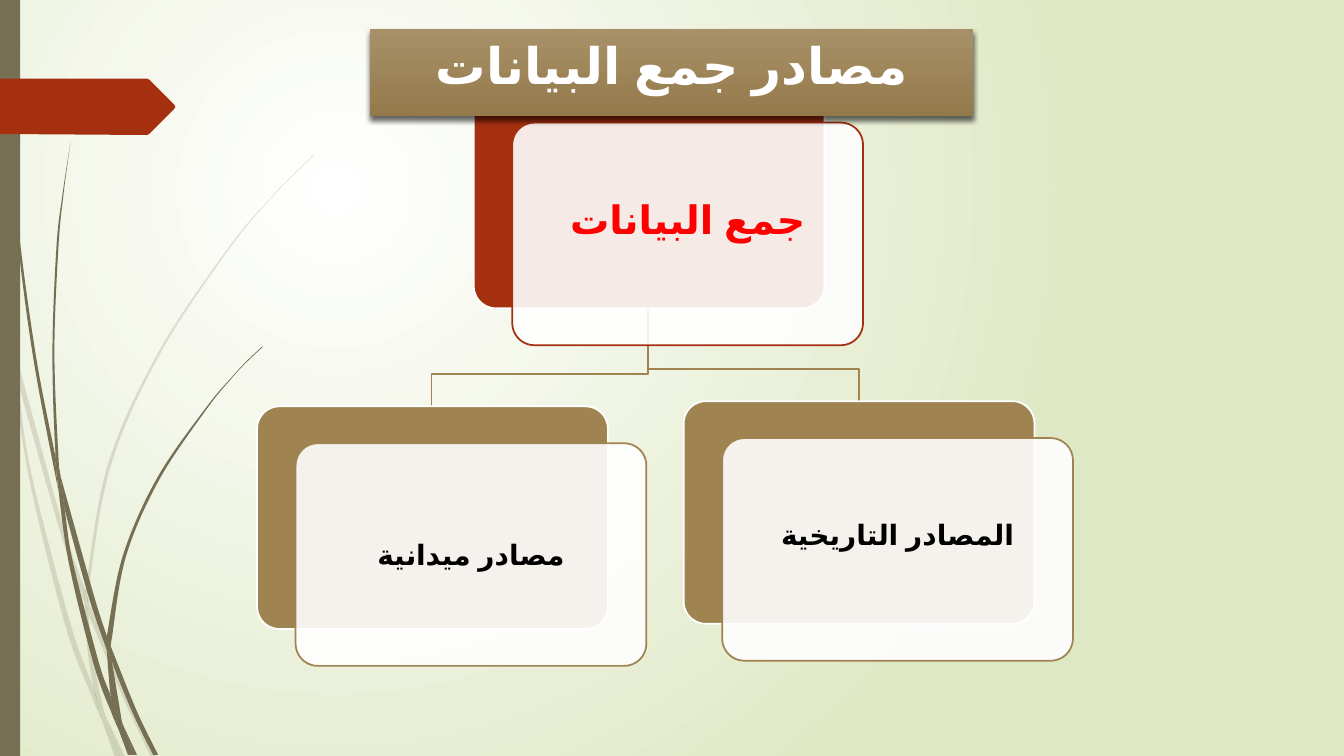
from dataclasses import dataclass
from typing import Optional

from lxml import etree
from pptx import Presentation
from pptx import util as u
from pptx.dml.color import RGBColor
from pptx.enum import shapes, text
from pptx.oxml import ns

FONT = "League Spartan"
OLIVE, RUST, TAN, WHITE = "766F54", "A53010", "9F8351", "FFFFFF"
CARD_WIDTH, CARD_HEIGHT = 8.84, 5.61
SHIFT_X, SHIFT_Y = 0.97, 0.93  # from the back panel of a card to its front panel
UNIT = 2.54  # centimetres per unit of the outline points

Point = tuple[float, float]


@dataclass
class Card:
    label: str
    left: float
    top: float
    accent: str
    color: str
    size: int
    inset: float
    lift: float = 0  # extra bottom margin that raises the label


@dataclass
class Blade:
    """A leaf of grass: one edge out, the other edge back."""
    out: list[Point]
    back: list[Point]


CARDS = [
    Card("جمع البيانات", 11.94, 2.16, RUST, "FF0000", 28, 0.3, 0.75),
    Card("المصادر التاريخية", 17.23, 10.11, TAN, "000000", 20, 0.2, 0.75),
    Card("مصادر ميدانية", 6.48, 10.24, TAN, "000000", 20, 0.2),
]
BRANCHES = [
    [(6.43, 3.06), (6.43, 3.71), (4.28, 3.71), (4.28, 4.03)],
    [(6.43, 3.06), (6.43, 3.66), (8.52, 3.66), (8.52, 3.98)],
]
FLAG = [(0, .78), (1.46, .78), (1.48, .79), (1.73, 1.04), (1.74, 1.06),
        (1.73, 1.08), (1.48, 1.33), (1.46, 1.34), (0, 1.33)]
PALE_BLADES = [
    Blade([(.11, 3.5), (.09, 3.22), (0, 2.82)], [(0, 2.99), (.1, 3.44), (.11, 3.5)]),
    Blade([(.17, 3.76), (.58, 5.22), (.84, 5.99)], [(.85, 5.86), (.62, 5.2), (.14, 3.45)]),
    Blade([(.88, 6.1), (1.23, 6.94), (1.5, 7.51)],
          [(1.55, 7.51), (1.27, 6.92), (.92, 6.07), (.88, 5.96)]),
    Blade([(1.05, 7.11), (1.19, 7.51)], [(1.24, 7.51), (1.05, 7.11)]),
    Blade([(.11, 3.5), (.28, 4.7), (.65, 6.21), (.92, 6.93), (1.01, 7.14)],
          [(.99, 7.07), (.93, 6.83), (.7, 6.19), (.31, 4.69), (.17, 3.76), (.11, 3.5)]),
    Blade([(.84, 5.99), (.87, 6.46), (.93, 6.83), (.96, 6.92), (1.05, 7.11)],
          [(1.03, 7.06), (.91, 6.46), (.88, 6.1), (.84, 5.99)]),
    Blade([(.88, 5.96), (.88, 5.84), (1.1, 4.62), (1.6, 3.49), (2.29, 2.45),
           (2.68, 1.98), (2.9, 1.75), (3.12, 1.54)],
          [(3.12, 1.53), (2.89, 1.75), (2.68, 1.97), (2.28, 2.44), (1.58, 3.48),
           (1.07, 4.61), (.85, 5.84), (.85, 5.86)]),
    Blade([(1.01, 7.14), (1.14, 7.51)], [(1.19, 7.51), (1.01, 7.14)]),
    Blade([(.88, 6.08), (.88, 6.1), (.88, 5.96)], [(.85, 5.86), (.84, 5.99), (.88, 6.08)]),
    Blade([(.93, 6.83), (.99, 7.07), (1.01, 7.14), (1.19, 7.51)],
          [(1.19, 7.51), (1.05, 7.11), (.96, 6.92), (.93, 6.83)]),
]
DARK_BLADES = [
    Blade([(.03, 0), (.04, .48), (.07, 1.1), (.17, 2.33), (.33, 3.55), (.56, 4.77), (.57, 4.81)],
          [(.55, 4.57), (.55, 4.53), (.36, 3.55), (.19, 2.32), (.08, 1.09), (.05, .48), (.04, 0)]),
    Blade([(.64, 5.05), (.88, 5.92), (1.06, 6.45)],
          [(1.06, 6.33), (1.06, 6.31), (.93, 5.9), (.6, 4.72)]),
    Blade([(1.1, 6.41), (1.11, 6.56), (1.32, 7.08), (1.52, 7.49)],
          [(1.57, 7.49), (1.36, 7.06), (1.13, 6.49), (1.1, 6.41)]),
    Blade([(.57, 4.77), (.68, 5.57), (.93, 6.59), (1.11, 7.08), (1.17, 7.22)],
          [(1.16, 7.17), (1.1, 6.91), (.98, 6.57), (.72, 5.56), (.64, 5.05), (.57, 4.77)]),
    Blade([(.6, 4.72), (.58, 4.53), (.54, 3.49), (.58, 2.45), (.63, 1.93), (.7, 1.41)],
          [(.7, 1.41), (.62, 1.93), (.56, 2.45), (.52, 3.49), (.55, 4.49), (.6, 4.72)]),
    Blade([(1.22, 7.19), (1.33, 7.49)], [(1.36, 7.49), (1.22, 7.19)]),
    Blade([(.55, 4.49), (.55, 4.53), (.57, 4.77), (.64, 5.05)],
          [(.64, 5.05), (.6, 4.72), (.55, 4.49)]),
    Blade([(1.1, 6.41), (1.11, 6.33), (1.25, 5.52), (1.58, 4.76), (2.05, 4.06),
           (2.31, 3.74), (2.45, 3.59), (2.61, 3.44)],
          [(2.6, 3.44), (2.45, 3.58), (2.31, 3.73), (2.04, 4.05), (1.56, 4.74),
           (1.22, 5.51), (1.06, 6.31)]),
    Blade([(1.17, 7.22), (1.27, 7.49)], [(1.31, 7.49), (1.17, 7.22)]),
    Blade([(1.06, 6.45), (1.1, 6.91), (1.16, 7.06), (1.22, 7.19)],
          [(1.21, 7.16), (1.11, 6.56), (1.09, 6.51), (1.06, 6.45)]),
    Blade([(1.06, 6.45), (1.09, 6.51), (1.11, 6.56)], [(1.1, 6.41), (1.06, 6.31), (1.06, 6.45)]),
    Blade([(1.1, 6.91), (1.16, 7.17), (1.17, 7.22), (1.3, 7.49)],
          [(1.33, 7.49), (1.22, 7.19), (1.16, 7.06), (1.1, 6.91)]),
]


def rgb(value: str) -> RGBColor:
    return RGBColor.from_string(value)


def child(parent, tag: str, **attributes: str):
    return etree.SubElement(parent, ns.qn(tag), attributes)


def paint(shape, fill: Optional[str] = None, line: Optional[str] = None, alpha: int = 100) -> None:
    shape.shadow.inherit = False
    if fill:
        shape.fill.solid()
        shape.fill.fore_color.rgb = rgb(fill)
        if alpha < 100:
            solid = shape.element.spPr.find(ns.qn("a:solidFill"))
            child(solid[0], "a:alpha", val=str(alpha * 1000))
    else:
        shape.fill.background()
    if line:
        shape.line.color.rgb = rgb(line)
        shape.line.width = u.Pt(1.25)
    else:
        shape.line.fill.background()


def blend(fill, first: str, last: str) -> None:
    fill.gradient()
    for stop, color in zip(fill.gradient_stops, (first, last)):
        stop.color.rgb = rgb(color)


def draw_outline(slide, points: list[Point], closed: bool = True, **look):
    start, *rest = [(u.Cm(x * UNIT), u.Cm(y * UNIT)) for x, y in points]
    builder = slide.shapes.build_freeform(*start, scale=1.0)
    builder.add_line_segments(rest, close=closed)
    outline = builder.convert_to_shape()
    paint(outline, **look)
    return outline


def draw_blade(slide, blade: Blade, **look) -> None:
    """Turn each edge's straight segments into one smooth Bezier run."""
    outline = draw_outline(slide, blade.out + blade.back, **look)
    nodes = list(outline.element.iter(ns.qn("a:pt")))
    split = len(blade.out)
    for edge in (nodes[:split], nodes[split:]):
        spots = [(int(node.get("x")), int(node.get("y"))) for node in edge]
        padded = [spots[0], *spots, spots[-1]]
        for node, a, b, c, d in zip(edge[1:], padded, padded[1:], padded[2:], padded[3:]):
            segment = node.getparent()
            segment.tag = ns.qn("a:cubicBezTo")
            leave = [q + (r - p) / 6 for p, q, r in zip(a, b, c)]
            arrive = [q - (r - p) / 6 for p, q, r in zip(b, c, d)]
            for x, y in (leave, arrive):
                child(segment, "a:pt", x=str(round(x)), y=str(round(y)))
            segment.append(node)


def draw_shape(slide, kind, left: float, top: float, width: float, height: float, **look):
    shape = slide.shapes.add_shape(kind, u.Cm(left), u.Cm(top), u.Cm(width), u.Cm(height))
    paint(shape, **look)
    return shape


def write(frame, content: str, *, size: int, color: str, anchor) -> None:
    frame.word_wrap = True
    frame.vertical_anchor = anchor
    paragraph = frame.paragraphs[0]
    paragraph.alignment = text.PP_ALIGN.CENTER
    paragraph._p.get_or_add_pPr().set("rtl", "1")
    run = paragraph.add_run()
    run.text = content
    run.font.size = u.Pt(size)
    run.font.bold = True
    run.font.name = FONT
    run.font.color.rgb = rgb(color)
    run._r.get_or_add_rPr().set("lang", "ar-SA")


def draw_card(slide, card: Card) -> None:
    left, top = card.left + SHIFT_X, card.top + SHIFT_Y
    for x, y, look in ((card.left, card.top, dict(fill=card.accent, line=WHITE)),
                       (left, top, dict(fill=WHITE, line=card.accent, alpha=90))):
        panel = draw_shape(slide, shapes.MSO_SHAPE.ROUNDED_RECTANGLE, x, y,
                           CARD_WIDTH, CARD_HEIGHT, **look)
        panel.adjustments[0] = 0.1
    label = slide.shapes.add_textbox(u.Cm(left + 0.17), u.Cm(top + 0.17),
                                     u.Cm(CARD_WIDTH - 0.34), u.Cm(CARD_HEIGHT - 0.34))
    frame = label.text_frame
    frame.margin_left = frame.margin_right = frame.margin_top = u.Cm(card.inset)
    frame.margin_bottom = u.Cm(card.inset + card.lift)
    write(frame, card.label, size=card.size, color=card.color, anchor=text.MSO_ANCHOR.MIDDLE)


def draw_title(slide) -> None:
    banner = draw_shape(slide, shapes.MSO_SHAPE.RECTANGLE, 9.33, 0.73, 15.2, 2.2)
    blend(banner.fill, "A89068", "947A4B")
    banner.fill.gradient_angle = 270
    effects = banner.element.spPr.find(ns.qn("a:effectLst"))
    shadow = child(effects, "a:outerShdw", blurRad=str(u.Pt(4)), dist=str(u.Pt(3)),
                   dir="5400000", rotWithShape="0")
    child(child(shadow, "a:srgbClr", val="000000"), "a:alpha", val="60000")
    write(banner.text_frame, "مصادر جمع البيانات", size=36, color=WHITE,
          anchor=text.MSO_ANCHOR.TOP)


def main() -> None:
    deck = Presentation()
    deck.slide_width, deck.slide_height = u.Cm(33.87), u.Cm(19.05)
    slide = deck.slides.add_slide(deck.slide_layouts[6])
    # Background glow
    blend(slide.background.fill, WHITE, "DFE8C4")
    glow = next(slide.element.iter(ns.qn("a:gradFill")))
    glow.remove(glow.find(ns.qn("a:lin")))
    child(child(glow, "a:path", path="circle"), "a:fillToRect",
          l="50000", t="50000", r="100000", b="100000")
    # Grass, side bar and flag
    for blades, alpha in ((PALE_BLADES, 20), (DARK_BLADES, 100)):
        for blade in blades:
            draw_blade(slide, blade, fill=OLIVE, alpha=alpha)
    draw_shape(slide, shapes.MSO_SHAPE.RECTANGLE, 0, 0, 0.51, 19.05, fill=OLIVE)
    draw_outline(slide, FLAG, fill=RUST)
    # Hierarchy
    for branch in BRANCHES:
        draw_outline(slide, branch, closed=False, line=TAN)
    for card in CARDS:
        draw_card(slide, card)
    draw_title(slide)
    deck.save("out.pptx")


if __name__ == "__main__":
    main()
